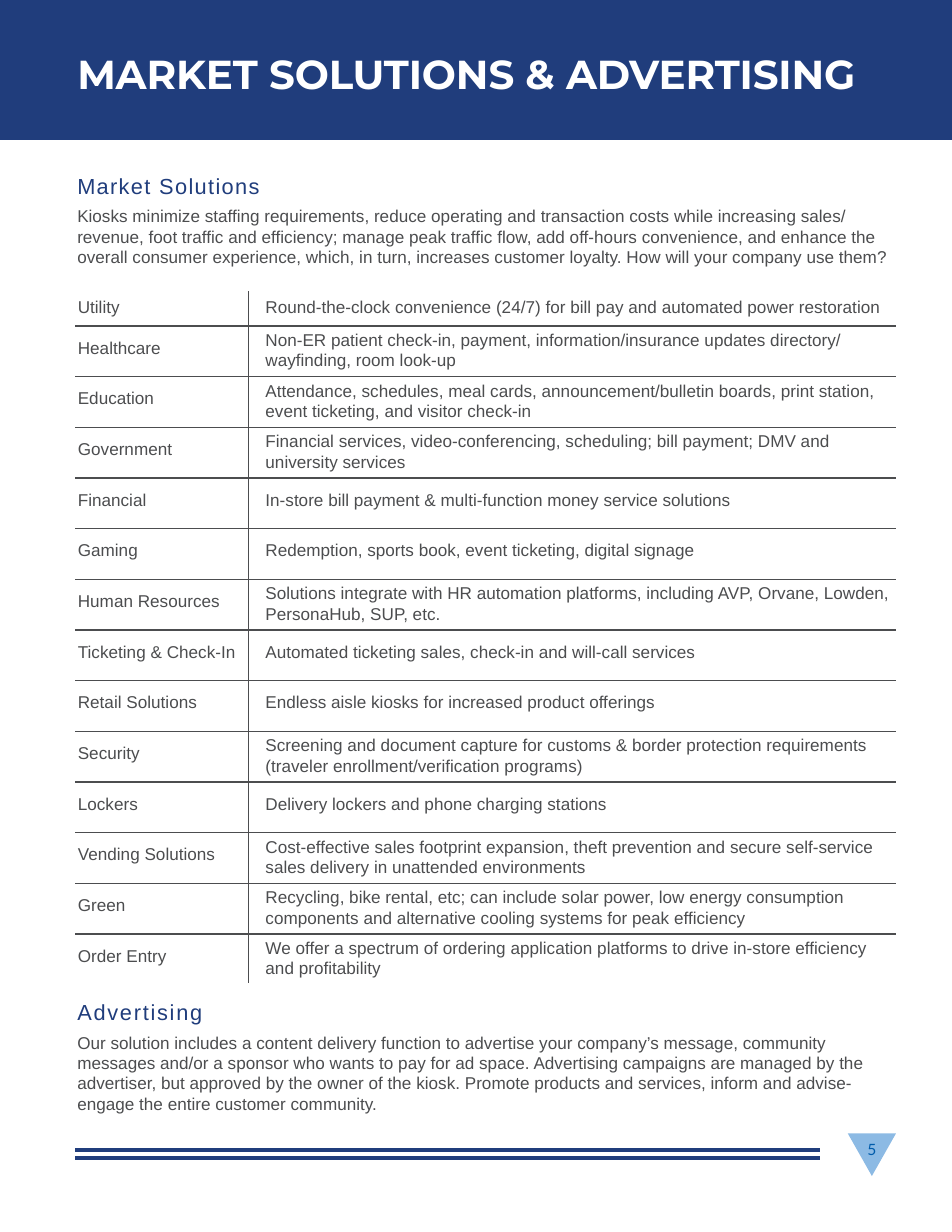
"""Build the market solutions and advertising page."""
from typing import NamedTuple, Optional

from lxml.etree import SubElement
from pptx import Presentation
from pptx.dml.color import RGBColor
from pptx.enum.shapes import MSO_CONNECTOR, MSO_SHAPE
from pptx.enum.text import MSO_ANCHOR, PP_ALIGN
from pptx.oxml.ns import qn
from pptx.util import Emu, Inches, Pt

NAVY = RGBColor(0x20, 0x3D, 0x7C)
SKY = RGBColor(0x8C, 0xBA, 0xE4)
BLUE = RGBColor(0x00, 0x5C, 0xAB)
GRAY = RGBColor(0x4C, 0x4D, 0x4F)
WHITE = RGBColor(0xFF, 0xFF, 0xFF)

COLUMNS, ROWS = 85, 110
PAGE_WIDTH, PAGE_HEIGHT = Inches(8.5), Inches(11)
LEFT, RIGHT = 6.7, 80
TEXT_LEFT = 6.8
FIRST_ROW, LAST_ROW, TABLE_HEIGHT = 3.1, 4.4, 61.8


class Style(NamedTuple):
    size: float
    color: RGBColor
    font: str = "Arial"
    bold: bool = False
    tracking: int = 0
    leading: Optional[float] = None
    before: Optional[float] = None
    align: PP_ALIGN = PP_ALIGN.LEFT


class Area(NamedTuple):
    left: float
    top: float
    width: float
    height: float


class Market(NamedTuple):
    name: str
    uses: str
    lines: int = 1


TITLE = Style(26, WHITE, "Montserrat", bold=True, tracking=-10)
HEADING = Style(14, NAVY, tracking=85)
WIDE_HEADING = HEADING._replace(tracking=110)
BODY = Style(11, GRAY, leading=13, before=4.8)
CELL = Style(11, GRAY)
CELL_PAIR = CELL._replace(leading=13)
PAGE_NUMBER = Style(10, BLUE, "Lato", align=PP_ALIGN.CENTER)

INTRO = (
    "Kiosks minimize staffing requirements, reduce operating and transaction costs "
    "while increasing sales/ revenue, foot traffic and efficiency; manage peak traffic "
    "flow, add off-hours convenience, and enhance the overall consumer experience, "
    "which, in turn, increases customer loyalty. How will your company use them?"
)
ADVERTISING = (
    "Our solution includes a content delivery function to advertise your company’s "
    "message, community messages and/or a sponsor who wants to pay for ad space. "
    "Advertising campaigns are managed by the advertiser, but approved by the owner of "
    "the kiosk. Promote products and services, inform and advise- engage the entire "
    "customer community."
)
MARKETS = [
    Market("Utility", "Round-the-clock convenience (24/7) for bill pay and automated power restoration"),
    Market("Healthcare", "Non-ER patient check-in, payment, information/insurance updates directory/ "
           "wayfinding, room look-up", 2),
    Market("Education", "Attendance, schedules, meal cards, announcement/bulletin boards, print station, "
           "event ticketing, and visitor check-in", 2),
    Market("Government", "Financial services, video-conferencing, scheduling; bill payment; DMV and "
           "university services", 2),
    Market("Financial", "In-store bill payment & multi-function money service solutions"),
    Market("Gaming", "Redemption, sports book, event ticketing, digital signage"),
    Market("Human Resources", "Solutions integrate with HR automation platforms, including AVP, Orvane, Lowden, "
           "PersonaHub, SUP, etc.", 2),
    Market("Ticketing & Check-In", "Automated ticketing sales, check-in and will-call services"),
    Market("Retail Solutions", "Endless aisle kiosks for increased product offerings"),
    Market("Security", "Screening and document capture for customs & border protection requirements "
           "(traveler enrollment/verification programs)", 2),
    Market("Lockers", "Delivery lockers and phone charging stations"),
    Market("Vending Solutions", "Cost-effective sales footprint expansion, theft prevention and secure "
           "self-service sales delivery in unattended environments", 2),
    Market("Green", "Recycling, bike rental, etc; can include solar power, low energy consumption "
           "components and alternative cooling systems for peak efficiency", 2),
    Market("Order Entry", "We offer a spectrum of ordering application platforms to drive in-store efficiency "
           "and profitability", 2),
]


def across(columns: float) -> Emu:
    return Emu(round(PAGE_WIDTH * columns / COLUMNS))


def down(rows: float) -> Emu:
    return Emu(round(PAGE_HEIGHT * rows / ROWS))


def place(area: Area) -> tuple:
    return across(area.left), down(area.top), across(area.width), down(area.height)


def write(para, text: str, style: Style) -> None:
    para.text = text
    para.alignment = style.align
    if style.leading:
        para.line_spacing = Pt(style.leading)
    if style.before:
        para.space_before = Pt(style.before)
    for span in para.runs:
        span.font.size = Pt(style.size)
        span.font.name = style.font
        span.font.bold = style.bold
        span.font.color.rgb = style.color
        if style.tracking:
            span._r.get_or_add_rPr().set("spc", str(style.tracking))


def add_text(page, area: Area, *parts: tuple) -> None:
    frame = page.shapes.add_textbox(*place(area)).text_frame
    frame.word_wrap = True
    frame.margin_left = frame.margin_right = frame.margin_top = frame.margin_bottom = 0
    for index, (text, style) in enumerate(parts):
        para = frame.add_paragraph() if index else frame.paragraphs[0]
        write(para, text, style)


def add_block(page, kind: MSO_SHAPE, area: Area, color: RGBColor) -> None:
    block = page.shapes.add_shape(kind, *place(area))
    block.shadow.inherit = False
    block.fill.solid()
    block.fill.fore_color.rgb = color
    block.line.fill.background()


def add_rule(page, top: float) -> None:
    rule = page.shapes.add_connector(
        MSO_CONNECTOR.STRAIGHT, across(LEFT), down(top), across(73.2), down(top))
    rule.line.color.rgb = NAVY
    rule.line.width = Pt(2.57)
    SubElement(rule._element.spPr, qn("a:effectLst"))


def set_borders(cell, drawn: dict) -> None:
    properties = cell._tc.get_or_add_tcPr()
    for side, visible in drawn.items():
        line = SubElement(properties, qn(f"a:ln{side}"), w=str(Pt(1)))
        if visible:
            fill = SubElement(line, qn("a:solidFill"))
            SubElement(fill, qn("a:srgbClr"), val=str(GRAY))
        else:
            SubElement(line, qn("a:noFill"))
    SubElement(properties, qn("a:noFill"))


def fill_cell(cell, text: str, lines: int, indent: float, top: float) -> None:
    cell.margin_left = across(indent)
    cell.margin_right = cell.margin_bottom = 0
    cell.margin_top = down(top)
    cell.vertical_anchor = MSO_ANCHOR.TOP
    write(cell.text_frame.paragraphs[0], text, CELL_PAIR if lines > 1 else CELL)


def add_market_table(page) -> None:
    last = len(MARKETS) - 1
    area = Area(LEFT, 26, RIGHT - LEFT, TABLE_HEIGHT)
    table = page.shapes.add_table(len(MARKETS), 2, *place(area)).table
    table.first_row = table.horz_banding = False
    table.columns[0].width = across(15.5)
    table.columns[1].width = across(area.width - 15.5)
    middle_row = (TABLE_HEIGHT - FIRST_ROW - LAST_ROW) / (last - 1)
    for index, market in enumerate(MARKETS):
        table.rows[index].height = down({0: FIRST_ROW, last: LAST_ROW}.get(index, middle_row))
        single_top = 1.15 if index else 0.6
        uses_top = 0.35 if market.lines > 1 else single_top
        name_cell, uses_cell = table.cell(index, 0), table.cell(index, 1)
        fill_cell(name_cell, market.name, 1, 0.25, single_top)
        fill_cell(uses_cell, market.uses, market.lines, 1.5, uses_top)
        for column, cell in enumerate((name_cell, uses_cell)):
            set_borders(cell, {"L": column == 1, "R": column == 0, "T": index > 0, "B": index < last})


def main() -> None:
    deck = Presentation()
    deck.slide_width, deck.slide_height = PAGE_WIDTH, PAGE_HEIGHT
    page = deck.slides.add_slide(deck.slide_layouts[6])
    add_block(page, MSO_SHAPE.FLOWCHART_MERGE, Area(75.7, 101.2, 4.3, 3.8), SKY)
    for top in (102.7, 103.4):
        add_rule(page, top)
    add_block(page, MSO_SHAPE.RECTANGLE, Area(0, 0, COLUMNS, 12.5), NAVY)
    add_text(page, Area(6.9, 4.4, 72, 4.4), ("MARKET SOLUTIONS & ADVERTISING", TITLE))
    add_text(page, Area(6.9, 15.4, 73, 8.5), ("Market Solutions", HEADING), (INTRO, BODY))
    add_text(page, Area(6.9, 89.2, 71.6, 10.5), ("Advertising", WIDE_HEADING), (ADVERTISING, BODY))
    add_text(page, Area(76.7, 101.8, 2.3, 1.7), ("5", PAGE_NUMBER))
    add_market_table(page)
    deck.save("out.pptx")


if __name__ == "__main__":
    main()
